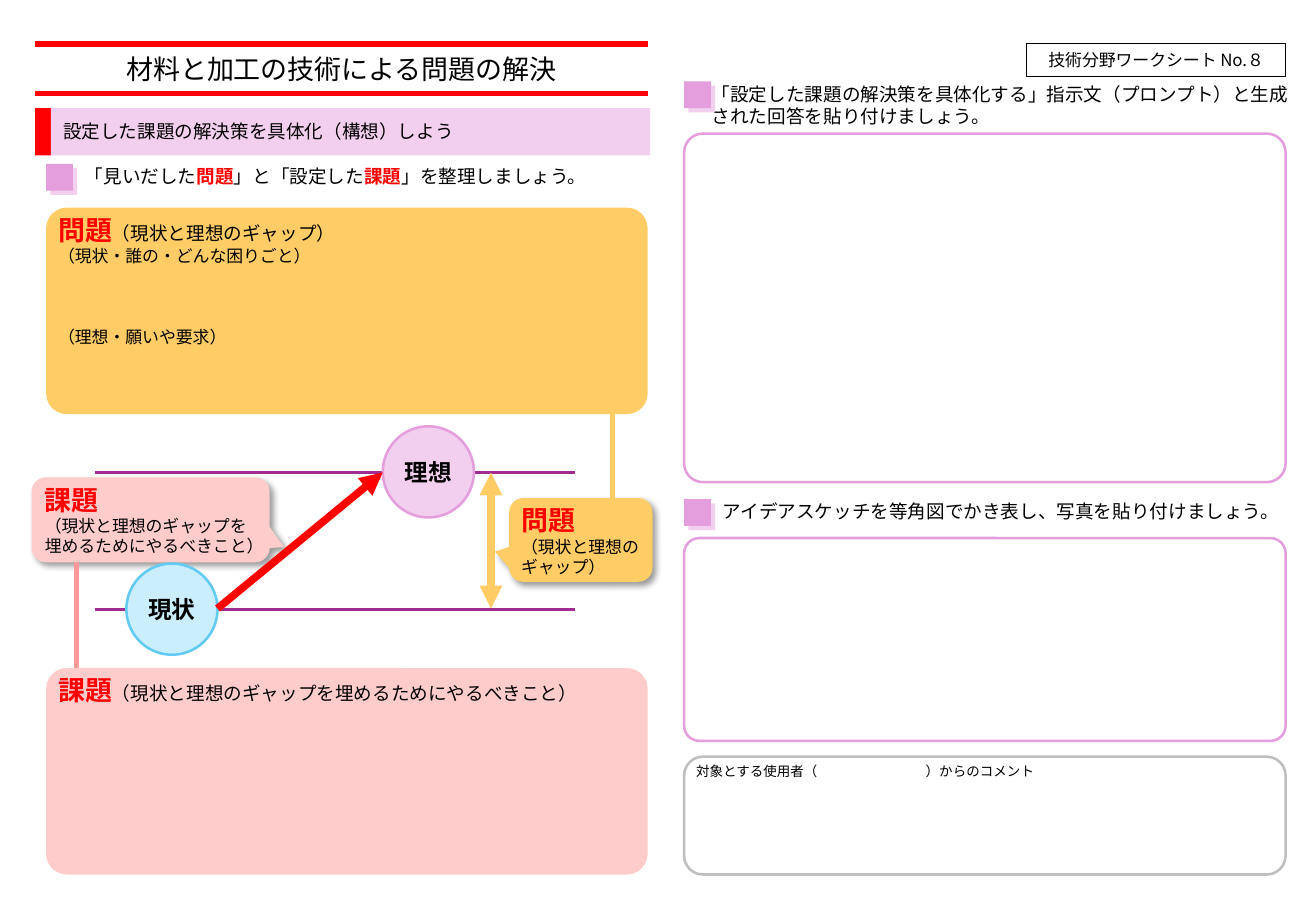
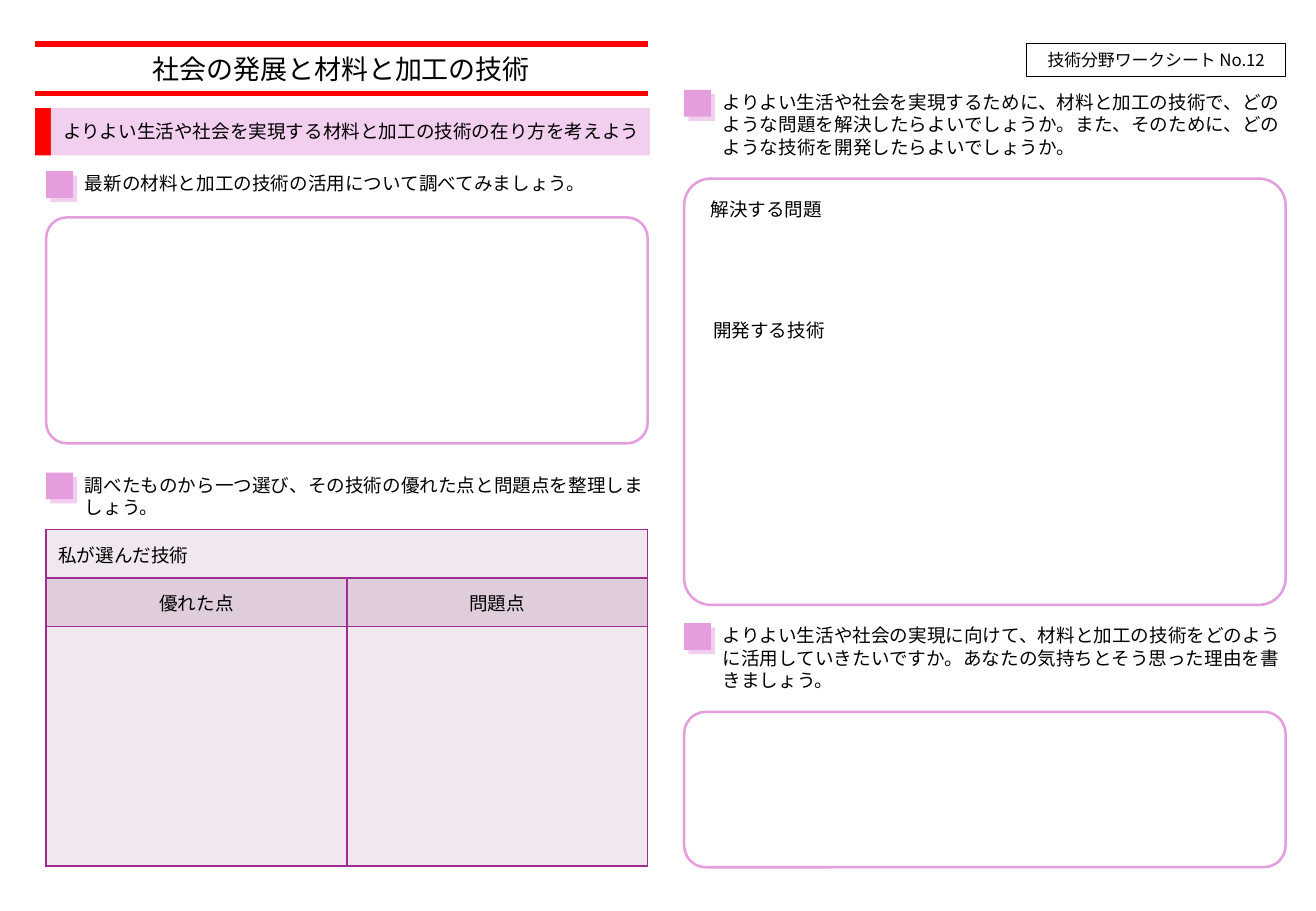
from dataclasses import dataclass, field
from lxml import etree
from pptx import Presentation, util as u
from pptx.dml.color import RGBColor
from pptx.enum import lang, shapes, text
from pptx.oxml import ns

KIND = shapes.MSO_SHAPE


@dataclass(frozen=True)
class Theme:
    font: str = "Noto Sans CJK JP"
    red: str = "FF0000"
    black: str = "000000"
    pale: str = "F2CFEE"
    pink: str = "E59EDD"
    plum: str = "A02B93"
    gold: str = "FFCC66"
    rose: str = "FFCCCC"
    coral: str = "FF9999"
    sky: str = "CAEEFB"
    blue: str = "61CBF4"
    gray: str = "BFBFBF"
    cell: str = "F0E8EE"
    band: str = "DFCDDC"
    type: dict = field(default_factory=lambda: {
        "title": (16, "000000", False),
        "key": (16, "FF0000", True),
        "node": (14, "000000", True),
        "body": (11, "000000", False),
        "bold": (11, "FF0000", True),
        "small": (10, "000000", False),
        "tiny": (8, "000000", False),
    })


T = Theme()
WIDE, HIGH = 10.83, 7.5
LEFT, RIGHT, SPAN = 0.38, 5.63, 4.95
EDGE, END = 0.29, 5.33
LOW, TOP = 5.02, 3.89
MID = text.MSO_ANCHOR.MIDDLE
CENTER = text.PP_ALIGN.CENTER

HEADS = [
    ("材料と加工の技術による問題の解決", "設定した課題の解決策を具体化（構想）しよう",
     "技術分野ワークシート No.８"),
    ("社会の発展と材料と加工の技術", "よりよい生活や社会を実現する材料と加工の技術の在り方を考えよう",
     "技術分野ワークシート No.12"),
]
ASKS = [
    [
        (LEFT, 1.35, 0.22, [("「見いだした", "body"), ("問題", "bold"), ("」と「設定した", "body"),
                            ("課題", "bold"), ("」を整理しましょう。", "body")]),
        (RIGHT, 0.67, 0.13, [("「設定した課題の解決策を具体化する」指示文（プロンプト）と生成された回答を貼り付けましょう。", "body")]),
        (RIGHT, 4.11, 0.22, [("アイデアスケッチを等角図でかき表し、写真を貼り付けましょう。", "body")]),
    ],
    [
        (LEFT, 1.41, 0.22, [("最新の材料と加工の技術の活用について調べてみましょう。", "body")]),
        (LEFT, 3.89, 0.22, [("調べたものから一つ選び、その技術の優れた点と問題点を整理しましょう。", "body")]),
        (RIGHT, 0.74, 0.22, [("よりよい生活や社会を実現するために、材料と加工の技術で、どのような問題を解決したらよいでしょうか。また、そのために、どのような技術を開発したらよいでしょうか。", "body")]),
        (RIGHT, 5.13, 0.22, [("よりよい生活や社会の実現に向けて、材料と加工の技術をどのように活用していきたいですか。あなたの気持ちとそう思った理由を書きましょう。", "body")]),
    ],
]
BOXES = [
    [
        (LEFT, 5.5, 1.7, 0.17, T.rose, None),
        (LEFT, 1.71, 1.7, 0.17, T.gold, None),
        (RIGHT, 1.1, 2.87, 0.155, None, T.pink),
        (RIGHT, 4.43, 1.67, 0.125, None, T.pink),
        (RIGHT, 6.23, 0.97, 0.155, None, T.gray),
    ],
    [
        (LEFT, 1.79, 1.86, 0.17, None, T.pink),
        (RIGHT, 1.47, 3.51, 0.22, None, T.pink),
        (RIGHT, 5.86, 1.28, 0.18, None, T.pink),
    ],
]
CALLS = [
    ((4.19, 4.1, 1.18, 0.69), (-0.6, 0.14, 0.17), T.gold),
    ((0.26, 3.93, 1.96, 0.7), (0.56, 0.32, 0.17), T.rose),
]
NODES = [
    ((1.04, 4.64), "現状", T.sky, T.blue),
    ((3.15, 3.51), "理想", T.pale, T.pink),
]
RULES = [((0.78, y), (4.73, y), T.plum, 1.5, ()) for y in (TOP, LOW)]
LINKS = [
    ((1.79, LOW - 0.01), (3.15, TOP), T.red, 4.5, ("tailEnd",)),
    ((4.04, TOP), (4.04, LOW - 0.01), T.gold, 4.5, ("headEnd", "tailEnd")),
    ((0.63, 4.63), (0.63, 5.5), T.coral, 3, ()),
    ((5.04, 3.39), (5.04, 4.1), T.gold, 3, ()),
]
NOTES = [
    [
        ((4.19, 4.1, 1.18, 0.71), [[("問題", "key")], [("（現状と理想のギャップ）", "small")]]),
        ((0.27, 3.93, 2.02, 0.71), [[("課題", "key")], [("（現状と理想のギャップを", "small")],
                                    [("埋めるためにやるべきこと）", "small")]]),
        ((LEFT, 1.71, SPAN, 1.55), [[("問題", "key"), ("（現状と理想のギャップ）", "body")],
                                    [("（現状・誰の・どんな困りごと）", "small")],
                                    [("（理想・願いや要求）", "small")]]),
        ((LEFT, 5.5, SPAN, 0.37), [[("課題", "key"), ("（現状と理想のギャップを埋めるためにやるべきこと）", "body")]]),
        ((RIGHT, 6.23, 3.84, 0.24), [[("対象とする使用者（\t）からのコメント", "tiny")]]),
    ],
    [
        ((5.75, 1.58, 4.7, 0.29), [[("解決する問題", "body")]]),
        ((5.77, 2.58, 4.7, 0.29), [[("開発する技術", "body")]]),
    ],
]
GRID = [["私が選んだ技術", ""], ["優れた点", "問題点"], ["", ""]]
ROWS = (0.4, 0.4, 1.97)


def put(item, **vals):
    for key, val in vals.items():
        setattr(item, key, val)


def inch(vals):
    return [u.Inches(v) for v in vals]


def sub(node, tag, **vals):
    return etree.SubElement(node, ns.qn("a:" + tag), {k: str(v) for k, v in vals.items()})


def paint(fill, tone):
    if tone:
        fill.solid()
        fill.fore_color.rgb = RGBColor.from_string(tone)
    else:
        fill.background()


def write(frame, paras, align=None, **vals):
    put(frame, word_wrap=True, **vals)
    for i, runs in enumerate(paras):
        para = frame.add_paragraph() if i else frame.paragraphs[0]
        para.alignment = align
        for words, style in runs:
            run = para.add_run()
            run.text = words
            size, tone, bold = T.type[style]
            paint(run.font.fill, tone)
            put(run.font, size=u.Pt(size), bold=bold, name=T.font,
                language_id=lang.MSO_LANGUAGE_ID.JAPANESE)
            sub(run.font._element, "ea", typeface=T.font)


def label(slide, area, paras, align=None):
    box = slide.shapes.add_textbox(*inch(area))
    write(box.text_frame, paras, align)
    return box.text_frame.paragraphs


def draw(slide, kind, area, fill=None, edge=None, wide=1.5, adjs=()):
    shape = slide.shapes.add_shape(kind, *inch(area))
    shape.shadow.inherit = False
    paint(shape.fill, fill)
    paint(shape.line.fill, edge)
    if edge:
        shape.line.width = u.Pt(wide)
    for i, val in enumerate(adjs):
        shape.adjustments[i] = val
    return shape


def link(slide, start, stop, tone, wide, tips=()):
    line = slide.shapes.add_connector(shapes.MSO_CONNECTOR.STRAIGHT, *inch(start + stop))
    paint(line.line.fill, tone)
    line.line.width = u.Pt(wide)
    props = line._element.spPr
    for tip in tips:
        sub(props.find(ns.qn("a:ln")), tip, type="triangle")
    sub(props, "effectLst")


def shade(shape):
    glow = shape._element.spPr.find(ns.qn("a:effectLst"))
    drop = sub(glow, "outerShdw", blurRad=u.Pt(4), dist=u.Pt(3), dir=45 * 60000,
               algn="tl", rotWithShape=0)
    sub(sub(drop, "srgbClr", val=T.black), "alpha", val=40000)


def head(slide, title, goal, tag):
    label(slide, (EDGE, 0.38, END - EDGE, 0.37), [[(title, "title")]], CENTER)
    for y in (0.36, 0.77):
        link(slide, (EDGE, y), (END, y), T.red, 3.5)
    draw(slide, KIND.RECTANGLE, (EDGE, 0.89, 0.13, 0.39), T.red)
    draw(slide, KIND.RECTANGLE, (0.42, 0.89, 4.93, 0.39), T.pale)
    label(slide, (0.42, 0.94, 5.15, 0.29), [[(goal, "body")]])
    box = draw(slide, KIND.RECTANGLE, (8.45, 0.36, 2.13, 0.27), None, T.black, 0.75)
    write(box.text_frame, [[(tag, "small")]], CENTER, vertical_anchor=MID)


def ask(slide, x, y, gap, runs):
    label(slide, (x + gap, y - 0.04, 4.97 if gap < 0.2 else 4.88, 0.29), [runs])
    for step, tone in ((0.035, T.pale), (0, T.pink)):
        draw(slide, KIND.RECTANGLE, (x + step, y + step, 0.22, 0.22), tone)


def chart(slide):
    for area, adjs, tone in CALLS:
        shade(draw(slide, KIND.ROUNDED_RECTANGULAR_CALLOUT, area, tone, adjs=adjs))
    for rule in RULES:
        link(slide, *rule)
    for spot, word, fill, edge in NODES:
        node = draw(slide, KIND.OVAL, (*spot, 0.75, 0.75), fill, edge)
        write(node.text_frame, [[(word, "node")]], CENTER, vertical_anchor=MID,
              margin_left=0, margin_right=0, margin_top=0, margin_bottom=0)
    for item in LINKS:
        link(slide, *item)


def table(slide):
    area = inch((LEFT, 4.36, SPAN, sum(ROWS)))
    grid = slide.shapes.add_table(len(ROWS), 2, *area).table
    for row, high in zip(grid.rows, ROWS):
        row.height = u.Inches(high)
    for r, words in enumerate(GRID):
        for c, word in enumerate(words):
            cell = grid.cell(r, c)
            cell.vertical_anchor = MID
            if word:
                write(cell.text_frame, [[(word, "body")]], CENTER if r == 1 else None)
            props = cell._tc.get_or_add_tcPr()
            for side in ("lnL", "lnR", "lnT", "lnB"):
                line = sub(props, side, w=u.Pt(1))
                sub(sub(line, "solidFill"), "srgbClr", val=T.plum)
            paint(cell.fill, T.band if r == 1 else T.cell)
    grid.cell(0, 0).merge(grid.cell(0, 1))


def main():
    deck = Presentation()
    put(deck, slide_width=u.Inches(WIDE), slide_height=u.Inches(HIGH))
    for i, (top, asks, boxes, notes, extra) in enumerate(
            zip(HEADS, ASKS, BOXES, NOTES, (chart, table))):
        slide = deck.slides.add_slide(deck.slide_layouts[6])
        for x, y, high, curve, fill, edge in boxes:
            draw(slide, KIND.ROUNDED_RECTANGLE, (x, y, SPAN, high), fill, edge,
                 adjs=[curve / high])
        head(slide, *top)
        extra(slide)
        for item in asks:
            ask(slide, *item)
        paras = [label(slide, *note) for note in notes]
        if i == 0:
            paras[2][-1].space_before = u.Pt(36)
            stops = sub(paras[4][0]._p.get_or_add_pPr(), "tabLst")
            sub(stops, "tab", pos=u.Inches(1.89), algn="l")
    deck.save("out.pptx")


if __name__ == "__main__":
    main()
